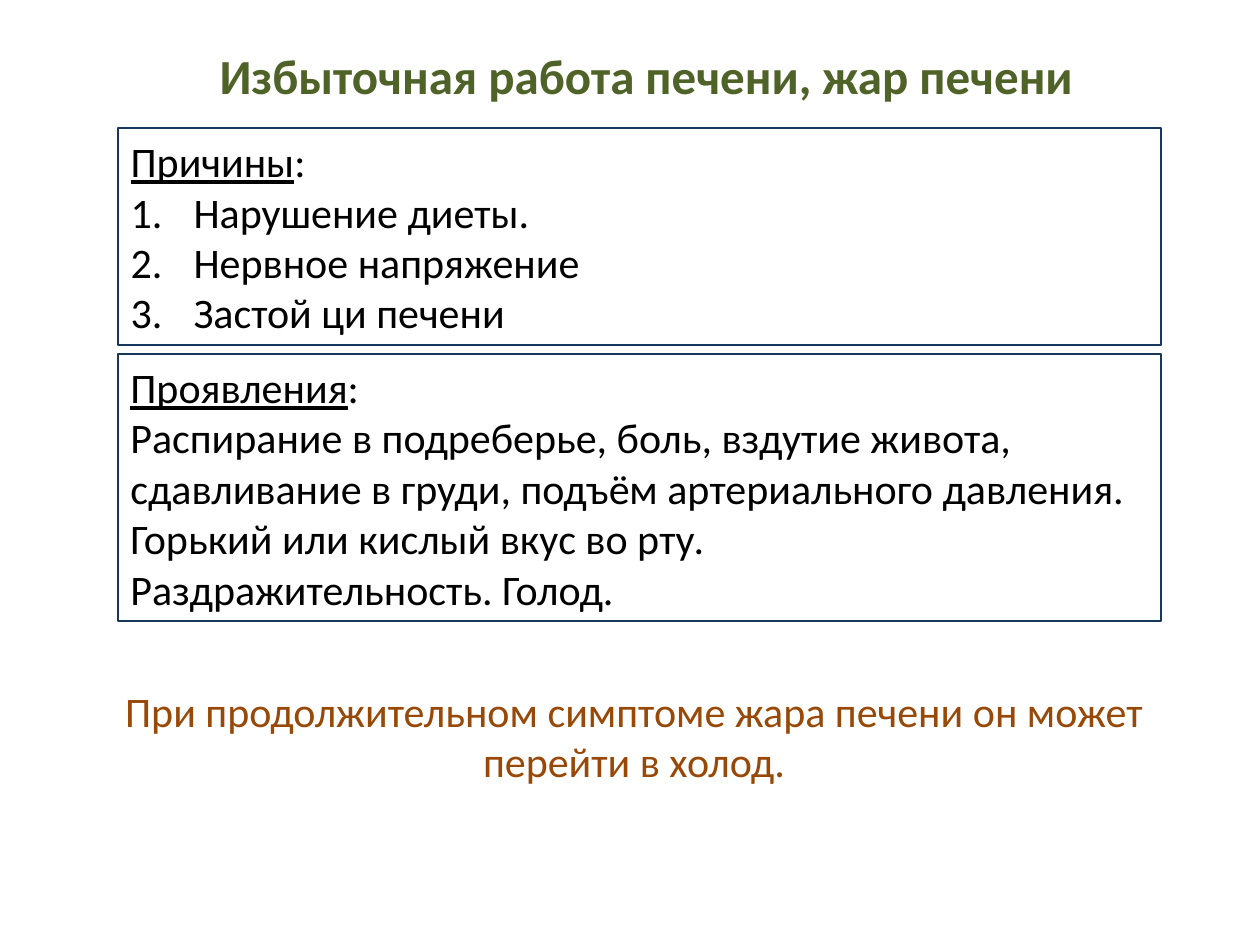
from dataclasses import dataclass

from pptx import Presentation
from pptx.dml.color import RGBColor
from pptx.enum.shapes import MSO_SHAPE
from pptx.enum.text import MSO_ANCHOR as Anchor, MSO_AUTO_SIZE as AutoSize, PP_ALIGN as Align
from pptx.oxml.xmlchemy import OxmlElement
from pptx.util import Emu, Inches, Pt

PX_PER_INCH = 126
FONT = "Calibri"
COLORS = {"title": "4F6228", "text": "000000", "border": "17375E", "note": "984807"}


@dataclass(frozen=True)
class Box:
    left: int
    top: int
    width: int
    height: int

    def emu(self) -> list[Emu]:
        return [px(v) for v in (self.left, self.top, self.width, self.height)]


@dataclass(frozen=True)
class Line:
    text: str
    heading: bool = False
    numbered: bool = False


TITLE_BOX = Box(207, 39, 888, 72)
CAUSES_BOX = Box(118, 128, 1043, 217)
SYMPTOMS_BOX = Box(118, 354, 1043, 267)
NOTE_BOX = Box(88, 679, 1092, 115)

CAUSES = [Line("Причины", heading=True)] + [
    Line(cause, numbered=True)
    for cause in ("Нарушение диеты.", "Нервное напряжение", "Застой ци печени")
]
SYMPTOMS = [
    Line("Проявления", heading=True),
    Line("Распирание в подреберье, боль, вздутие живота, сдавливание в груди, "
         "подъём артериального давления."),
    Line("Горький или кислый вкус во рту."),
    Line("Раздражительность. Голод."),
]


def px(value: int) -> Emu:
    return Emu(round(value * Inches(1) / PX_PER_INCH))


def set_bullet(paragraph, numbered: bool) -> None:
    """Number the paragraph with a hanging indent, or clear any inherited bullet."""
    properties = paragraph._p.get_or_add_pPr()
    indent = Inches(0.5) if numbered else 0
    properties.set("marL", str(indent))
    properties.set("indent", str(-indent))
    if numbered:
        font = OxmlElement("a:buFont")
        font.set("typeface", "+mj-lt")
        properties.append(font)
    bullet = OxmlElement("a:buAutoNum" if numbered else "a:buNone")
    if numbered:
        bullet.set("type", "arabicPeriod")
    properties.append(bullet)


def write(shape, lines: list[Line], *, color: str = "text", size: int = 24,
          bold: bool = False, align: Align = Align.LEFT,
          anchor: Anchor = Anchor.TOP, wrap: bool = True) -> None:
    frame = shape.text_frame
    frame.word_wrap = wrap
    frame.auto_size = AutoSize.NONE
    frame.vertical_anchor = anchor
    for index, line in enumerate(lines):
        paragraph = frame.add_paragraph() if index else frame.paragraphs[0]
        paragraph.alignment = align
        paragraph.space_before = Pt(0)
        set_bullet(paragraph, line.numbered)
        pieces = [(line.text, line.heading)] + ([(":", False)] if line.heading else [])
        for text, underlined in pieces:
            run = paragraph.add_run()
            run.text = text
            run.font.name = FONT
            run.font.size = Pt(size)
            run.font.bold = bold
            run.font.underline = underlined
            run.font.color.rgb = RGBColor.from_string(COLORS[color])


def place(shape, box: Box) -> None:
    shape.left, shape.top, shape.width, shape.height = box.emu()


def outline(shape) -> None:
    shape.fill.background()
    shape.line.color.rgb = RGBColor.from_string(COLORS["border"])
    shape.line.width = Pt(0.75)


def main() -> None:
    deck = Presentation()
    deck.slide_width, deck.slide_height = Inches(10), Inches(7.5)
    slide = deck.slides.add_slide(deck.slide_layouts[1])

    title = slide.shapes.title
    place(title, TITLE_BOX)
    write(title, [Line("Избыточная работа печени, жар печени")],
          color="title", size=28, bold=True, wrap=False)

    causes = slide.placeholders[1]
    place(causes, CAUSES_BOX)
    symptoms = slide.shapes.add_shape(MSO_SHAPE.RECTANGLE, *SYMPTOMS_BOX.emu())
    symptoms.shadow.inherit = False
    for panel, lines in ((causes, CAUSES), (symptoms, SYMPTOMS)):
        outline(panel)
        write(panel, lines, anchor=Anchor.MIDDLE)

    note = slide.shapes.add_textbox(*NOTE_BOX.emu())
    write(note, [Line("При продолжительном симптоме жара печени он может перейти в холод.")],
          color="note", align=Align.CENTER)

    deck.save("out.pptx")


if __name__ == "__main__":
    main()
